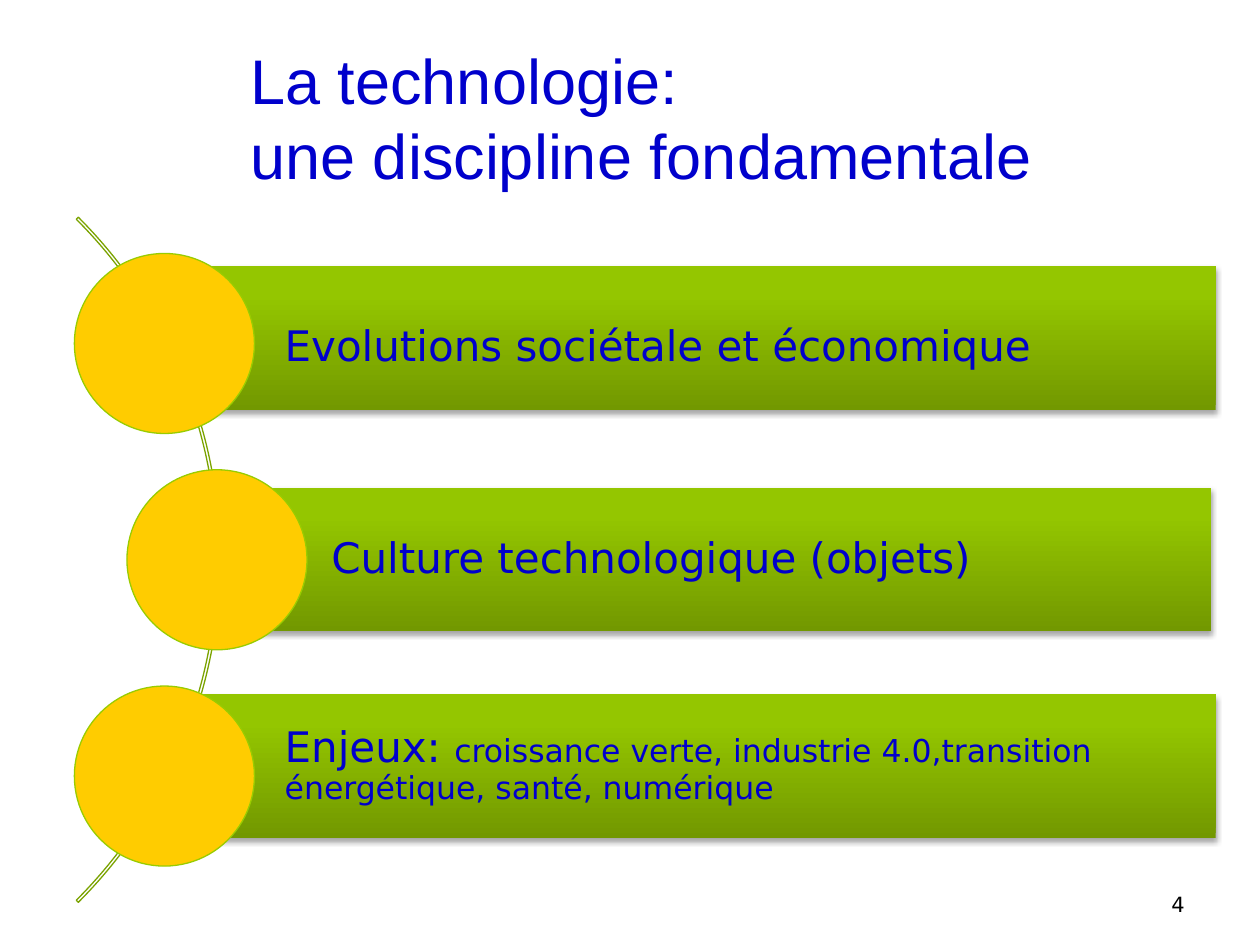
from pptx import Presentation
from pptx.util import Cm, Pt
from pptx.dml.color import RGBColor
from pptx.enum.shapes import MSO_SHAPE as Kind
from pptx.enum.text import MSO_ANCHOR as Anchor, PP_ALIGN as Align
from pptx.oxml import parse_xml
from pptx.oxml.ns import nsdecls

# Content: circle left, bar box, top inset, text runs with sizes
TITLE = "La technologie:\nune discipline fondamentale"
ROWS = [
    (1.5, (3.43, 5.36, 21.08), 0.6,
     [("Evolutions sociétale et économique", 24)]),
    (2.56, (4.37, 9.83, 20.04), 0.18,
     [("Culture technologique (objets)", 24)]),
    (1.5, (3.43, 14.0, 21.08), 0.18,
     [("Enjeux: ", 24),
      ("croissance verte, industrie 4.0,transition énergétique, "
       "santé, numérique", 18)]),
]
NUMBER = "4"

# Look
BLUE, BLACK, GOLD, LIME, OLIVE = "0000CC", "000000", "FFCC00", "99CC00", "7BA300"
SANS = "DejaVu Sans"
STOPS = [(0, "729800"), (80, "94C600"), (100, "95C700")]
BAR_H, DOT, DOT_TOP, STEP = 2.9, 3.63, 5.11, 4.36


def color(code):
    return RGBColor.from_string(code)


def write(shape, runs, font, code, anchor, inset, **para):
    frame = shape.text_frame
    form = dict(word_wrap=True, vertical_anchor=anchor)
    sides = ("margin_left", "margin_top", "margin_right", "margin_bottom")
    form.update(zip(sides, map(Cm, inset)))
    for key, val in form.items():
        setattr(frame, key, val)
    line = frame.paragraphs[0]
    for key, val in para.items():
        setattr(line, key, val)
    for text, size in runs:
        for i, part in enumerate(text.split("\n")):
            if i:
                line.add_line_break()
            run = line.add_run()
            run.text = part
            for key, val in dict(name=font, size=Pt(size)).items():
                setattr(run.font, key, val)
            run.font.color.rgb = color(code)


def shade(bar):
    """Upward gradient, no outline, soft shadow below."""
    props = bar._element.spPr
    stops = "".join(
        f'<a:gs pos="{pos * 1000}"><a:srgbClr val="{code}"/></a:gs>'
        for pos, code in STOPS)
    props.append(parse_xml(
        f'<a:gradFill {nsdecls("a")} rotWithShape="1"><a:gsLst>{stops}</a:gsLst>'
        '<a:lin ang="16200000" scaled="0"/></a:gradFill>'))
    bar.line.fill.background()
    props.append(parse_xml(
        f'<a:effectLst {nsdecls("a")}><a:outerShdw blurRad="{Pt(3.1)}" '
        f'dist="{Pt(1.8)}" dir="5400000" rotWithShape="0">'
        f'<a:srgbClr val="{BLACK}"><a:alpha val="35000"/></a:srgbClr>'
        '</a:outerShdw></a:effectLst>'))


def outline(shape, code):
    shape.shadow.inherit = False
    shape.line.color.rgb = color(code)
    shape.line.width = Pt(0.75)


deck = Presentation()
deck.slide_width, deck.slide_height = Cm(25.4), Cm(19.05)
slide = deck.slides.add_slide(deck.slide_layouts[6])
parts = slide.shapes

# Title
head = parts.add_textbox(Cm(4.8), Cm(0.84), Cm(19.33), Cm(3.17))
write(head, [(TITLE, 36)], "Arial", BLUE, Anchor.BOTTOM,
      (0.25, 0.13, 0.25, 0.13))

# Arc behind the rows
arc = parts.add_shape(Kind.BLOCK_ARC, Cm(-15.09), Cm(1.52), Cm(19.53), Cm(19.53))
for i, val in enumerate((189, 27, 0.003)):
    arc.adjustments[i] = val
arc.fill.background()
outline(arc, OLIVE)

# Bars and circles
for i, (left, (x, y, w), top, runs) in enumerate(ROWS):
    bar = parts.add_shape(Kind.RECTANGLE, Cm(x), Cm(y), Cm(w), Cm(BAR_H))
    shade(bar)
    write(bar, runs, SANS, BLUE, Anchor.MIDDLE, (2.31, top, 0.18, 0.18),
          alignment=Align.LEFT, line_spacing=0.9)
    dot = parts.add_shape(Kind.OVAL, Cm(left), Cm(DOT_TOP + i * STEP),
                          Cm(DOT), Cm(DOT))
    dot.fill.solid()
    dot.fill.fore_color.rgb = color(GOLD)
    outline(dot, LIME)

# Slide number
foot = parts.add_textbox(Cm(18.21), Cm(17.35), Cm(5.92), Cm(1.27))
write(foot, [(NUMBER, 12)], SANS, BLACK, Anchor.BOTTOM,
      (0.25, 0.13, 0.25, 0.13), alignment=Align.RIGHT)

deck.save("out.pptx")
